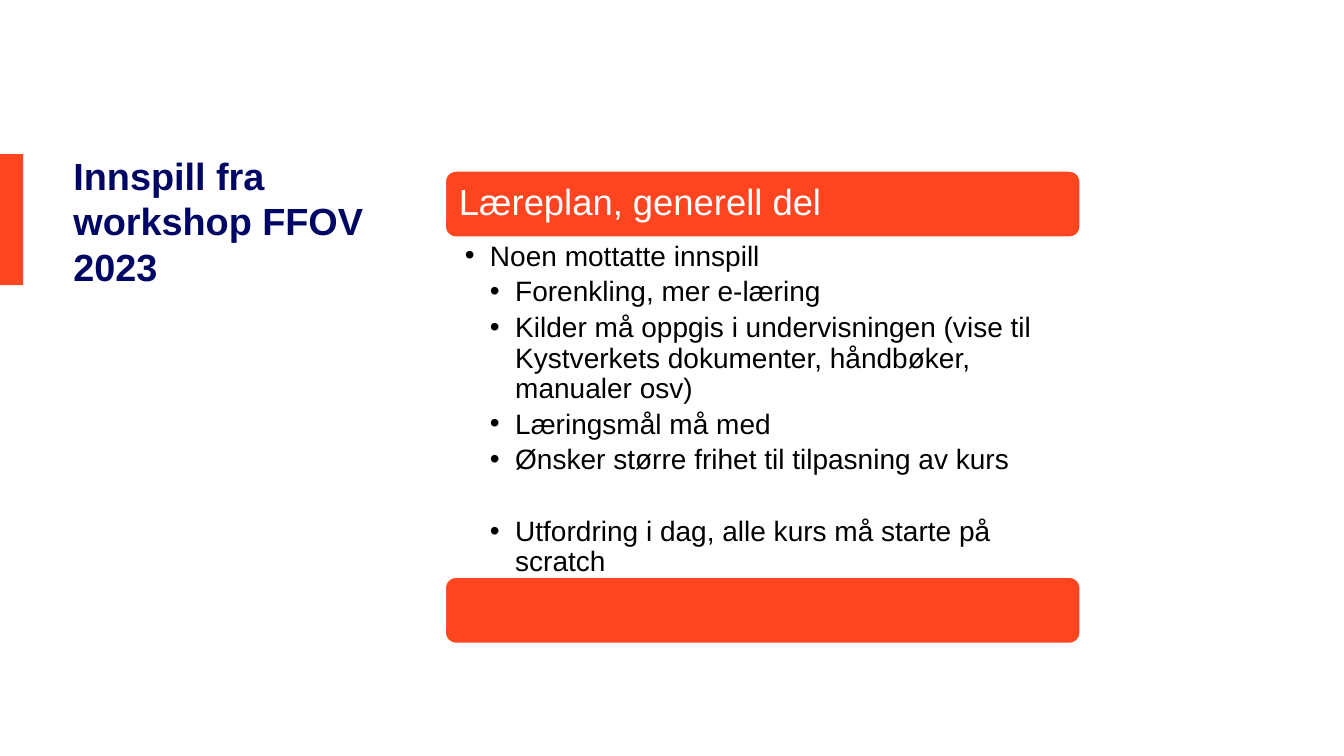
from lxml import etree
from pptx import Presentation
from pptx import util as u
from pptx.dml.color import RGBColor
from pptx.enum import shapes, text
from pptx.oxml.ns import qn

TITLE = "Innspill fra workshop FFOV 2023"
HEADING = "Læreplan, generell del"
# (level, wording, space after in points)
POINTS = [
    (1, "Noen mottatte innspill", 4),
    (2, "Forenkling, mer e-læring", 4),
    (2, "Kilder må oppgis i undervisningen (vise til Kystverkets "
        "dokumenter, håndbøker, manualer osv)", 4),
    (2, "Læringsmål må med", 4),
    (2, "Ønsker større frihet til tilpasning av kurs", 29.5),
    (2, "Utfordring i dag, alle kurs må starte på scratch", 0),
]
COLOURS = {"accent": "FF451F", "title": "000664", "body": "000000", "white": "FFFFFF"}
FONT = "Arial"
INDENT = 0.25

# Content column: a heading bar, the points, a closing bar
COLUMN_LEFT, COLUMN_TOP, COLUMN_WIDTH = 4.41, 1.69, 6.31
BAR_HEIGHT, POINTS_HEIGHT = 0.67, 3.35
POINTS_TOP = COLUMN_TOP + BAR_HEIGHT
CLOSING_TOP = POINTS_TOP + POINTS_HEIGHT + 0.01

deck = Presentation()
deck.slide_width, deck.slide_height = u.Inches(13.33), u.Inches(7.5)
page = deck.slides.add_slide(deck.slide_layouts[6])


def colour(name):
    return RGBColor.from_string(COLOURS[name])


def add_block(preset, *place):
    block = page.shapes.add_shape(preset, *map(u.Inches, place))
    block.shadow.inherit = False
    block.fill.solid()
    block.fill.fore_color.rgb = colour("accent")
    block.line.fill.background()
    return block


def add_bar(top):
    bar = add_block(shapes.MSO_SHAPE.ROUNDED_RECTANGLE,
                    COLUMN_LEFT, top, COLUMN_WIDTH, BAR_HEIGHT)
    bar.line.color.rgb = colour("white")
    bar.line.width = u.Pt(2)
    return bar


def set_frame(box, anchor, side, edge):
    frame = box.text_frame
    frame.word_wrap = True
    frame.vertical_anchor = anchor
    frame.margin_left = frame.margin_right = u.Inches(side)
    frame.margin_top = frame.margin_bottom = u.Inches(edge)
    return frame


def write(para, wording, size, shade, bold=False, spacing=0.9):
    para.text = wording
    para.alignment = text.PP_ALIGN.LEFT
    para.line_spacing = spacing
    for span in para.runs:
        span.font.name = FONT
        span.font.size = u.Pt(size)
        span.font.bold = bold
        span.font.color.rgb = colour(shade)


def add_bullet(para, level):
    props = para._p.get_or_add_pPr()
    props.set("marL", str(u.Inches(INDENT * level)))
    props.set("indent", str(u.Inches(-INDENT)))
    etree.SubElement(props, qn("a:buFont")).set("typeface", FONT)
    etree.SubElement(props, qn("a:buChar")).set("char", "•")


# Title with its edge marker
add_block(shapes.MSO_SHAPE.RECTANGLE, 0, 1.53, 0.23, 1.3)
title = page.shapes.add_textbox(*map(u.Inches, (0.63, 1.43, 3.54, 1.52)))
title_frame = set_frame(title, text.MSO_ANCHOR.MIDDLE, 0.1, 0.05)
write(title_frame.paragraphs[0], TITLE, 27, "title", bold=True, spacing=1.0)

# Heading bar
heading = add_bar(COLUMN_TOP)
heading_frame = set_frame(heading, text.MSO_ANCHOR.MIDDLE, 0.11, 0.11)
write(heading_frame.paragraphs[0], HEADING, 26, "white")

# Points
points = page.shapes.add_textbox(
    *map(u.Inches, (COLUMN_LEFT, POINTS_TOP, COLUMN_WIDTH, POINTS_HEIGHT)))
points_frame = set_frame(points, text.MSO_ANCHOR.TOP, 0.2, 0.04)
for number, (level, wording, after) in enumerate(POINTS):
    para = points_frame.add_paragraph() if number else points_frame.paragraphs[0]
    para.level = level
    add_bullet(para, level)
    write(para, wording, 20, "body")
    para.space_after = u.Pt(after)

# Closing bar
add_bar(CLOSING_TOP)

deck.save("out.pptx")
